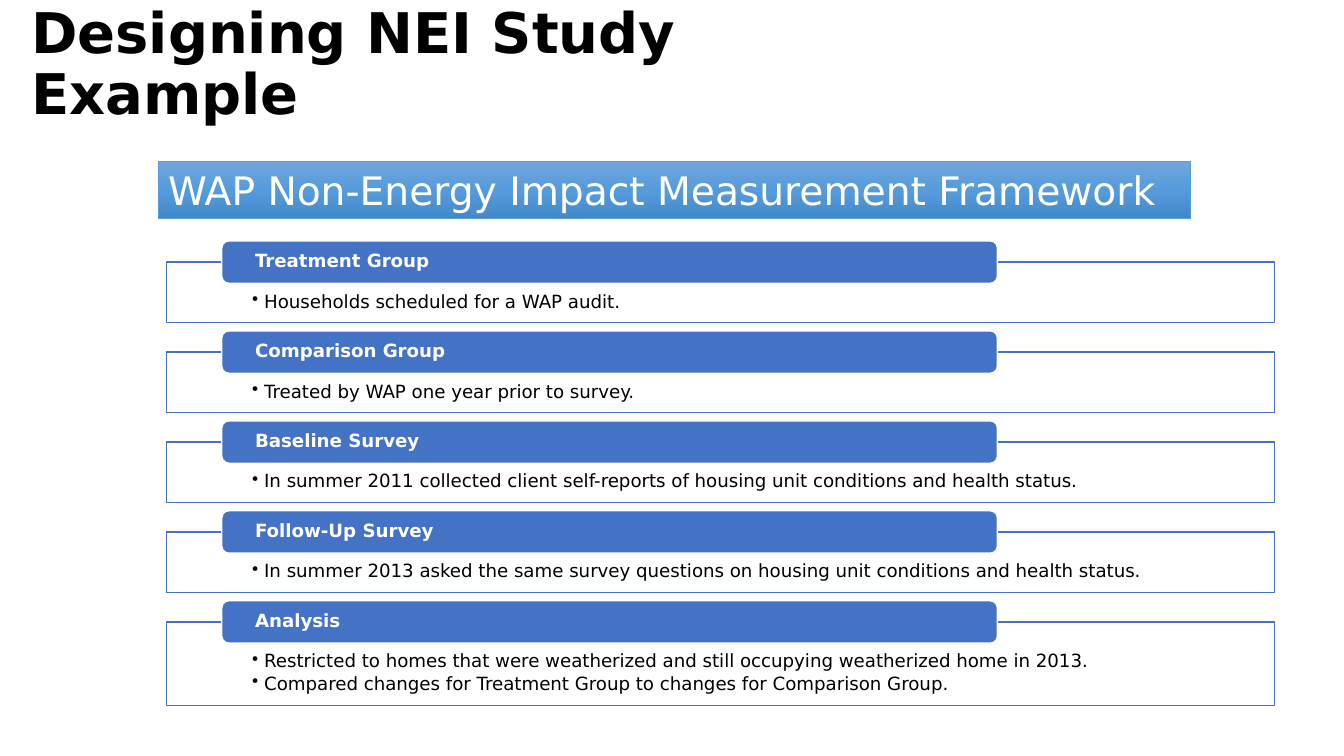
from copy import deepcopy

from lxml import etree
from pptx import Presentation
from pptx.dml.color import RGBColor
from pptx.enum.shapes import MSO_SHAPE
from pptx.enum.text import MSO_ANCHOR, PP_ALIGN
from pptx.oxml.ns import qn
from pptx.util import Inches, Pt

RECTANGLE = MSO_SHAPE.RECTANGLE
ROUNDED = MSO_SHAPE.ROUNDED_RECTANGLE
TOP, MIDDLE = MSO_ANCHOR.TOP, MSO_ANCHOR.MIDDLE
LEFT = PP_ALIGN.LEFT

FONT = "DejaVu Sans"
BLUE, WHITE, BLACK = "4472C4", "FFFFFF", "000000"
BANNER_STOPS = [(0, "71A6DB"), (0.5, "559BDB"), (1, "448ACA")]

TITLE_LINES = ["Designing NEI Study", "Example"]
BANNER_TEXT = "WAP Non-Energy Impact Measurement Framework"
STEPS = [
    ("Treatment Group", ["Households scheduled for a WAP audit."]),
    ("Comparison Group", ["Treated by WAP one year prior to survey."]),
    ("Baseline Survey", ["In summer 2011 collected client self-reports of housing "
                         "unit conditions and health status."]),
    ("Follow-Up Survey", ["In summer 2013 asked the same survey questions on housing "
                          "unit conditions and health status."]),
    ("Analysis", ["Restricted to homes that were weatherized and still occupying "
                  "weatherized home in 2013.",
                  "Compared changes for Treatment Group to changes for "
                  "Comparison Group."]),
]
FIRST_TOP, LAST_TOP = 2.6, 6.17
ROW_HEIGHT, EXTRA_LINE = 0.6, 0.23


def color(value):
    """Turn a hex string into a colour."""
    return RGBColor.from_string(value)


def add_span(para, text, size, fill, bold=False):
    """Add one formatted run to a paragraph."""
    span = para.add_run()
    span.text = text
    span.font.name = FONT
    span.font.size = Pt(size)
    span.font.bold = bold
    span.font.color.rgb = color(fill)


def add_box(page, kind, box, line, width, anchor, insets):
    """Add an outlined shape and prepare its text frame."""
    shape = page.shapes.add_shape(kind, *[Inches(length) for length in box])
    shape.shadow.inherit = False
    shape.line.color.rgb = color(line)
    shape.line.width = Pt(width)
    frame = shape.text_frame
    frame.word_wrap = True
    frame.vertical_anchor = anchor
    (frame.margin_left, frame.margin_top, frame.margin_right,
     frame.margin_bottom) = [Inches(inset) for inset in insets]
    frame.paragraphs[0].alignment = LEFT
    return shape


def add_title(page, box):
    """Place the slide title in its placeholder."""
    title = page.shapes.title
    title.left, title.top, title.width, title.height = [Inches(n) for n in box]
    title.text_frame.word_wrap = True
    title.text_frame.vertical_anchor = MIDDLE
    para = title.text_frame.paragraphs[0]
    para.alignment = LEFT
    para.line_spacing = 0.9
    for index, text in enumerate(TITLE_LINES):
        if index:
            para.add_line_break()
        add_span(para, text, 40, BLACK, bold=True)


def add_banner(page, box):
    """Draw the gradient banner with the framework name."""
    banner = add_box(page, RECTANGLE, box, "5B9BD5", 0.5, TOP, (0.1, 0.05, 0.1, 0.05))
    banner.fill.gradient()
    banner.fill.gradient_angle = 270
    stops = banner._element.spPr.find(qn("a:gradFill")).find(qn("a:gsLst"))
    stops.insert(1, deepcopy(stops[0]))
    for stop, (position, value) in zip(banner.fill.gradient_stops, BANNER_STOPS):
        stop.position = position
        stop.color.rgb = color(value)
    add_span(banner.text_frame.paragraphs[0], BANNER_TEXT, 28, WHITE)


def add_bullet(para):
    """Give a paragraph a hanging round bullet."""
    properties = para._p.get_or_add_pPr()
    properties.set("marL", str(Inches(0.12)))
    properties.set("indent", str(-Inches(0.12)))
    etree.SubElement(properties, qn("a:buChar")).set("char", "•")


def add_step(page, box, heading, points):
    """Draw one framed list with its heading tab."""
    left, top, width, height = box
    panel = add_box(page, RECTANGLE, box, BLUE, 1, TOP, (0.85, 0.3, 0.85, 0.1))
    panel.fill.solid()
    panel.fill.fore_color.rgb = color(WHITE)
    shade = panel._element.spPr.find(qn("a:solidFill"))[0]
    etree.SubElement(shade, qn("a:alpha")).set("val", "90000")
    frame = panel.text_frame
    for index, text in enumerate(points):
        para = frame.add_paragraph() if index else frame.paragraphs[0]
        para.alignment = LEFT
        para.line_spacing = 0.9
        para.space_after = Pt(2)
        add_bullet(para)
        add_span(para, text, 13, BLACK)

    tab_box = (left + 0.55, top - 0.21, 0.7 * width, 0.42)
    tab = add_box(page, ROUNDED, tab_box, WHITE, 1, MIDDLE, (0.31, 0, 0.31, 0))
    tab.fill.solid()
    tab.fill.fore_color.rgb = color(BLUE)
    para = tab.text_frame.paragraphs[0]
    para.line_spacing = 0.9
    add_span(para, heading, 13, WHITE, bold=True)


def add_steps(page, left, width):
    """Stack the study steps at an equal pitch."""
    pitch = (LAST_TOP - FIRST_TOP) / (len(STEPS) - 1)
    for index, (heading, points) in enumerate(STEPS):
        height = ROW_HEIGHT + EXTRA_LINE * (len(points) - 1)
        box = (left, FIRST_TOP + index * pitch, width, height)
        add_step(page, box, heading, points)


def main():
    """Build the deck and save it."""
    deck = Presentation()
    deck.slide_width, deck.slide_height = Inches(13.33), Inches(7.5)
    page = deck.slides.add_slide(deck.slide_layouts[5])
    add_title(page, (0.21, -0.07, 11.5, 1.45))
    add_steps(page, 1.65, 10.99)
    add_banner(page, (1.57, 1.6, 10.24, 0.57))
    deck.save("out.pptx")


if __name__ == "__main__":
    main()
